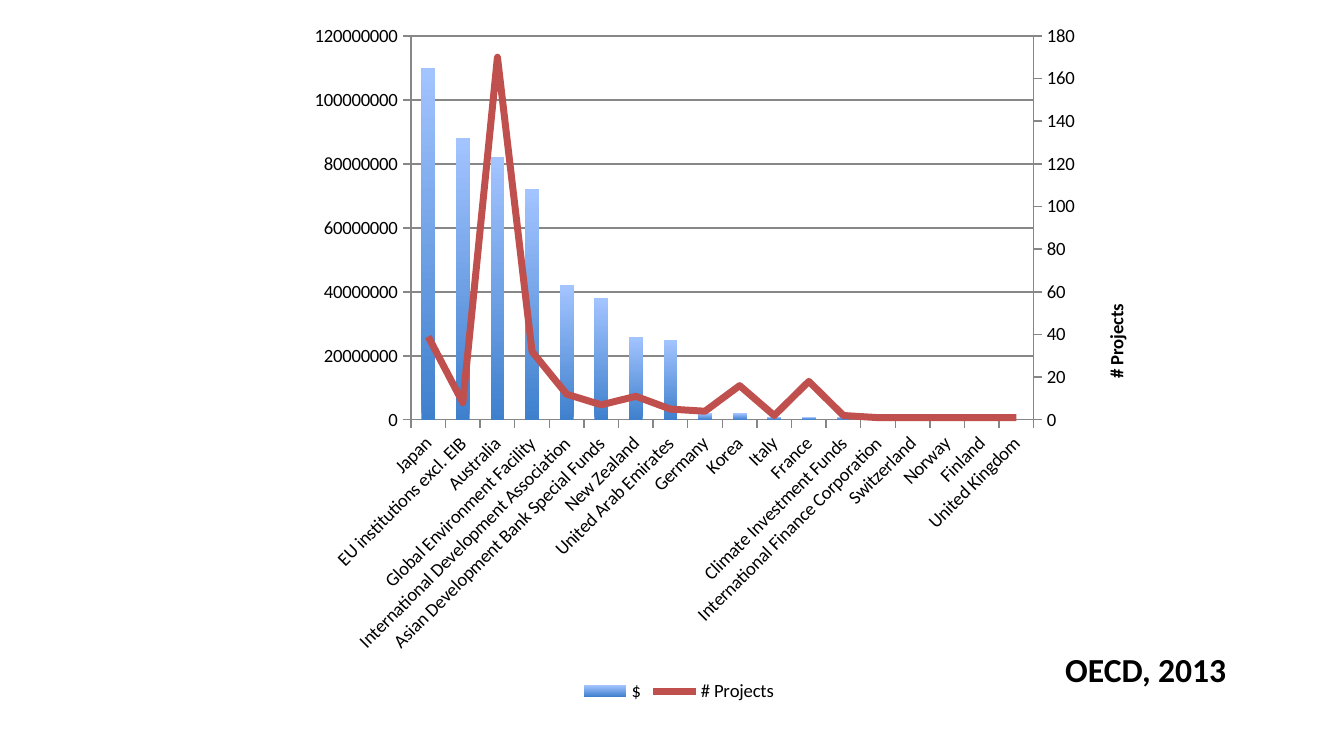
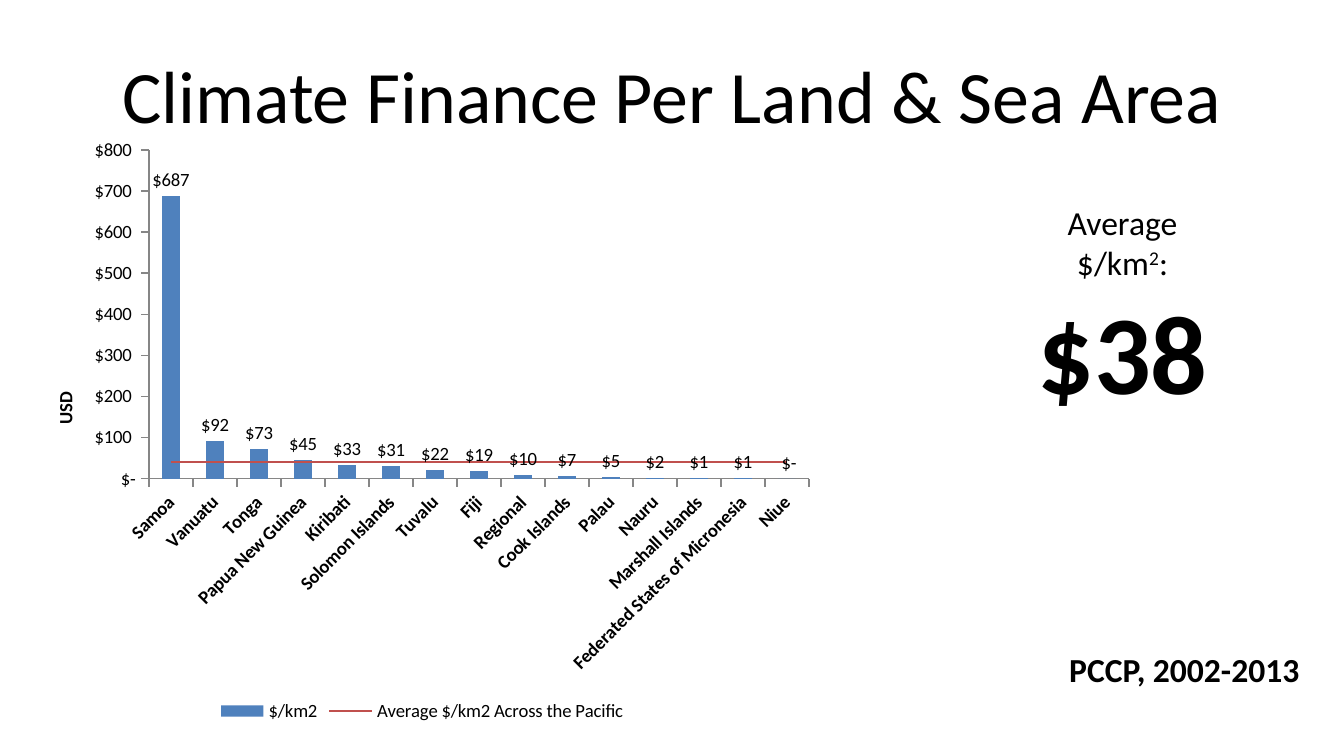
from copy import deepcopy

from pptx import Presentation
from pptx import util as u
from pptx.chart.axis import ValueAxis
from pptx.chart.data import CategoryChartData
from pptx.dml.color import RGBColor
from pptx.enum import chart as ch
from pptx.enum import text
from pptx.oxml import parse_xml
from pptx.oxml.ns import nsdecls, qn

PX = 914400 / 134.4
FONT = "Calibri"
BLACK = RGBColor(0x00, 0x00, 0x00)
GREY = RGBColor(0x86, 0x86, 0x86)
BLUE = RGBColor(0x4F, 0x81, 0xBD)
BLUE_DARK = RGBColor(0x3F, 0x80, 0xCD)
BLUE_LIGHT = RGBColor(0xA3, 0xC4, 0xFF)
RED = RGBColor(0xC0, 0x50, 0x4D)
DOLLARS = '_-"$"* #,##0_-;\\-"$"* #,##0_-;_-"$"* "-"'

MILLION = 1_000_000
DONORS = [
    ("Japan", 110, 39),
    ("EU institutions excl. EIB", 88, 8),
    ("Australia", 82, 170),
    ("Global Environment Facility", 72, 32),
    ("International Development Association", 42, 12),
    ("Asian Development Bank Special Funds", 38, 7),
    ("New Zealand", 26, 11),
    ("United Arab Emirates", 25, 5),
    ("Germany", 2, 4),
    ("Korea", 2, 16),
    ("Italy", 1, 2),
    ("France", 1, 18),
    ("Climate Investment Funds", 1, 2),
    ("International Finance Corporation", 0, 1),
    ("Switzerland", 0, 1),
    ("Norway", 0, 1),
    ("Finland", 0, 1),
    ("United Kingdom", 0, 1),
]
AREA_FINANCE = {
    "Samoa": 687, "Vanuatu": 92, "Tonga": 73, "Papua New Guinea": 45,
    "Kiribati": 33, "Solomon Islands": 31, "Tuvalu": 22, "Fiji": 19,
    "Regional": 10, "Cook Islands": 7, "Palau": 5, "Nauru": 2,
    "Marshall Islands": 1, "Federated States of Micronesia": 1, "Niue": 0,
}
AVERAGE = 40


def px(*lengths):
    return [u.Emu(round(length * PX)) for length in lengths]


def style_font(font, size, bold=False):
    font.name = FONT
    font.size = u.Pt(size)
    font.bold = bold
    font.color.rgb = BLACK


def set_layout(part, frame, left, top, width=None, height=None):
    """Fix a chart part at slide px, inside the chart frame given in px."""
    x, y, w, h = frame
    fields = [("xMode", "edge"), ("yMode", "edge"),
              ("x", f"{(left - x) / w:.4f}"), ("y", f"{(top - y) / h:.4f}")]
    if width:
        fields.insert(0, ("layoutTarget", "inner"))
        fields += [("w", f"{width / w:.4f}"), ("h", f"{height / h:.4f}")]
    body = "".join(f'<c:{tag} val="{value}"/>' for tag, value in fields)
    layout = parse_xml(f'<c:layout {nsdecls("c")}><c:manualLayout>{body}'
                       '</c:manualLayout></c:layout>')
    existing = part.find(qn("c:layout"))
    if existing is None:
        part.insert(0, layout)
    else:
        part.replace(existing, layout)


def style_axis_line(axis):
    axis.format.line.color.rgb = GREY
    axis.format.line.width = u.Pt(0.75)
    axis.major_tick_mark = ch.XL_TICK_MARK.OUTSIDE
    axis.minor_tick_mark = ch.XL_TICK_MARK.NONE


def style_category_axis(axis, bold):
    style_axis_line(axis)
    style_font(axis.tick_labels.font, 10, bold)
    labels = axis._element.find(qn("c:txPr"))
    labels.find(qn("a:bodyPr")).set("rot", "-2700000")


def style_value_axis(axis, frame, title, title_at, top, step,
                     number_format, gridlines=False):
    style_axis_line(axis)
    axis.minimum_scale, axis.maximum_scale, axis.major_unit = 0, top, step
    axis.has_major_gridlines = gridlines
    if gridlines:
        axis.major_gridlines.format.line.color.rgb = GREY
        axis.major_gridlines.format.line.width = u.Pt(0.75)
    style_font(axis.tick_labels.font, 10)
    axis.tick_labels.number_format = number_format
    axis.tick_labels.number_format_is_linked = False
    axis.axis_title.text_frame.text = title
    style_font(axis.axis_title.text_frame.paragraphs[0].font, 10, True)
    heading = axis._element.find(qn("c:title"))
    turn = next(heading.iter(qn("a:bodyPr")))
    turn.set("rot", "-5400000")
    turn.set("vert", "horz")
    set_layout(heading, frame, *title_at)


def split_off_line(chart, width):
    """Turn the second column series into a line on the same axes."""
    bars = chart._chartSpace.find(".//" + qn("c:barChart"))
    series = bars.findall(qn("c:ser"))[1]
    for column_only in series.findall(qn("c:invertIfNegative")):
        series.remove(column_only)
    lines = parse_xml(f'<c:lineChart {nsdecls("c")}><c:grouping val="standard"/>'
                      '<c:varyColors val="0"/><c:marker val="1"/></c:lineChart>')
    lines.insert(2, series)
    for axis_id in bars.findall(qn("c:axId")):
        lines.append(deepcopy(axis_id))
    bars.addnext(lines)
    line = chart.plots[1].series[0]
    line.smooth = False
    line.marker.style = ch.XL_MARKER_STYLE.NONE
    line.format.line.color.rgb = RED
    line.format.line.width = u.Pt(width)


def add_right_axis(chart):
    """Give the line plot its own value axis and a hidden category axis."""
    plot_area = chart._chartSpace.find(".//" + qn("c:plotArea"))
    lines = plot_area.find(qn("c:lineChart"))
    categories = deepcopy(plot_area.find(qn("c:catAx")))
    values = deepcopy(plot_area.find(qn("c:valAx")))
    for axis, own, other in ((categories, "101", "102"), (values, "102", "101")):
        axis.find(qn("c:axId")).set("val", own)
        axis.find(qn("c:crossAx")).set("val", other)
    for axis_id, own in zip(lines.findall(qn("c:axId")), ("101", "102")):
        axis_id.set("val", own)
    categories.find(qn("c:delete")).set("val", "1")
    values.find(qn("c:axPos")).set("val", "r")
    values.find(qn("c:crosses")).set("val", "max")
    plot_area.find(qn("c:valAx")).addnext(values)
    values.addnext(categories)
    return ValueAxis(values)


def add_combined_chart(slide, frame, plot_box, categories, columns, line,
                       line_width, bold_categories=False):
    """Columns and line are (name, values) pairs."""
    data = CategoryChartData()
    data.categories = categories
    for name, values in (columns, line):
        data.add_series(name, values)
    chart = slide.shapes.add_chart(
        ch.XL_CHART_TYPE.COLUMN_CLUSTERED, *px(*frame), data).chart
    style_font(chart.font, 10)
    chart.has_title = False
    chart.has_legend = True
    chart.legend.position = ch.XL_LEGEND_POSITION.BOTTOM
    chart.legend.include_in_layout = False
    chart.plots[0].gap_width = 150
    chart.plots[0].vary_by_categories = False
    split_off_line(chart, line_width)
    set_layout(chart._chartSpace.find(".//" + qn("c:plotArea")), frame, *plot_box)
    style_category_axis(chart.category_axis, bold_categories)
    return chart


def add_text_box(slide, box):
    frame = slide.shapes.add_textbox(*px(*box)).text_frame
    frame.word_wrap = True
    frame.auto_size = text.MSO_AUTO_SIZE.SHAPE_TO_FIT_TEXT
    return frame


def add_source_note(slide, left, words):
    note = add_text_box(slide, (left, 642, 269, 54)).paragraphs[0]
    note.text = words
    style_font(note.font, 18, True)


def add_average(slide):
    callout = add_text_box(slide, (1015, 195, 215, 271))
    caption, amount = callout.paragraphs[0], callout.add_paragraph()
    for words in ("Average $/km", "2", ":"):
        caption.add_run().text = words
    caption.runs[1].font._element.set("baseline", "30000")
    amount.text = "$38"
    style_font(caption.font, 18)
    style_font(amount.font, 60, True)
    caption.alignment = amount.alignment = text.PP_ALIGN.CENTER


def set_title(slide, words):
    title = slide.shapes.title
    title.left, title.top, title.width, title.height = px(67, 31, 1210, 126)
    title.text_frame.text = words
    title.text_frame.vertical_anchor = text.MSO_ANCHOR.MIDDLE
    heading = title.text_frame.paragraphs[0]
    heading.alignment = text.PP_ALIGN.CENTER
    style_font(heading.font, 39.6)


def build_donors(slide):
    frame = (214, 11, 930, 696)
    names, millions, projects = zip(*DONORS)
    chart = add_combined_chart(
        slide, frame, (411, 36, 623, 384), names,
        ("$", [amount * MILLION for amount in millions]),
        ("# Projects", projects), line_width=3.75)
    fill = chart.plots[0].series[0].format.fill
    fill.gradient()
    fill.gradient_angle = 90
    for stop, colour in zip(fill.gradient_stops, (BLUE_DARK, BLUE_LIGHT)):
        stop.color.rgb = colour
    project_axis = add_right_axis(chart)
    style_value_axis(chart.value_axis, frame, "Million USD", (245, 292),
                     120 * MILLION, 20 * MILLION, DOLLARS, gridlines=True)
    style_value_axis(project_axis, frame, "# Projects", (1101, 301),
                     180, 20, "General")
    add_source_note(slide, 1052, "OECD, 2013")


def build_area_finance(slide):
    set_title(slide, "Climate Finance Per Land & Sea Area")
    frame = (19, 128, 806, 599)
    chart = add_combined_chart(
        slide, frame, (149, 150, 660, 329), list(AREA_FINANCE),
        ("$/km2", list(AREA_FINANCE.values())),
        ("Average $/km2 Across the Pacific", [AVERAGE] * len(AREA_FINANCE)),
        line_width=1, bold_categories=True)
    columns = chart.plots[0].series[0]
    columns.format.fill.solid()
    columns.format.fill.fore_color.rgb = BLUE
    labels = columns.data_labels
    labels.show_value = True
    labels.number_format = DOLLARS
    labels.number_format_is_linked = False
    labels.position = ch.XL_LABEL_POSITION.OUTSIDE_END
    style_font(labels.font, 10)
    style_value_axis(chart.value_axis, frame, "USD", (50, 389), 800, 100, DOLLARS)
    add_average(slide)
    add_source_note(slide, 1056, "PCCP, 2002-2013")


def main():
    deck = Presentation()
    deck.slide_width, deck.slide_height = px(1344, 756)
    title_only, blank = deck.slide_layouts[5], deck.slide_layouts[6]
    build_donors(deck.slides.add_slide(blank))
    build_area_finance(deck.slides.add_slide(title_only))
    deck.save("out.pptx")


if __name__ == "__main__":
    main()
